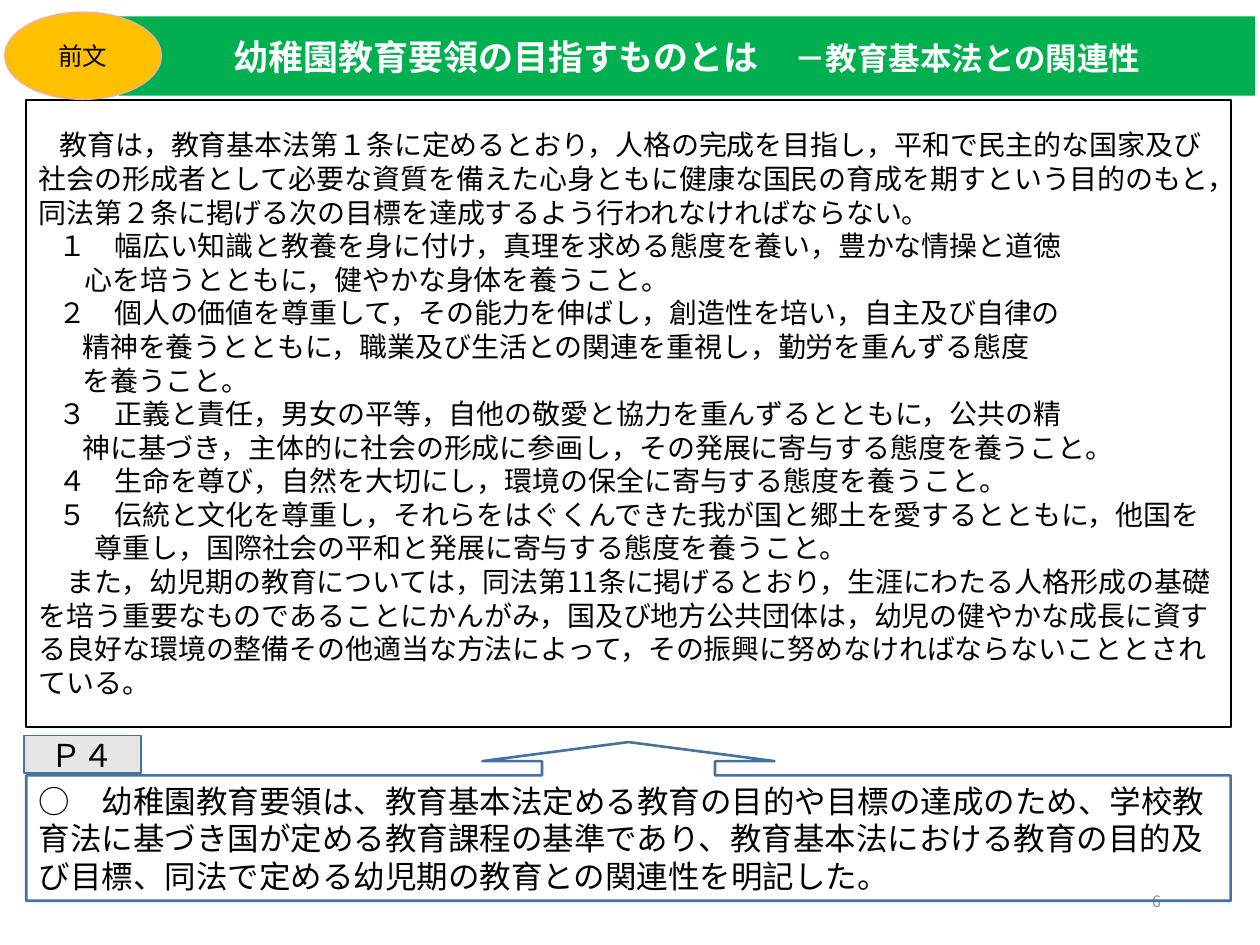
from dataclasses import dataclass

from pptx import Presentation
from pptx.dml.color import RGBColor
from pptx.enum.shapes import MSO_SHAPE as Shape
from pptx.enum.text import MSO_ANCHOR as Anchor, PP_ALIGN as Align
from pptx.oxml.ns import qn
from pptx.util import Cm, Pt


@dataclass(frozen=True)
class Theme:
    font: str = "Noto Sans CJK JP"
    black: str = "000000"
    white: str = "FFFFFF"
    green: str = "00B050"
    amber: str = "FFC000"
    peach: str = "F4B183"
    blue: str = "43739E"
    light_gray: str = "E7E6E6"
    gray: str = "8C8C8C"
    title: int = 20
    large: int = 18
    body: int = 16
    badge: int = 14
    small: int = 9


theme = Theme()
presentation = Presentation()
presentation.slide_width, presentation.slide_height = Cm(25.4), Cm(19.05)
slide = presentation.slides.add_slide(presentation.slide_layouts[6])


def add_box(kind, box, fill=None, line=None, width=1, anchor=Anchor.MIDDLE):
    shape = slide.shapes.add_shape(kind, *(Cm(length) for length in box))
    shape.shadow.inherit = False
    if fill:
        shape.fill.solid()
        shape.fill.fore_color.rgb = RGBColor.from_string(fill)
    else:
        shape.fill.background()
    if line:
        shape.line.color.rgb = RGBColor.from_string(line)
        shape.line.width = Pt(width)
    else:
        shape.line.fill.background()
    shape.text_frame.word_wrap = True
    shape.text_frame.vertical_anchor = anchor
    return shape


def write(paragraph, text, size, color=theme.black, align=Align.LEFT, bold=False):
    paragraph.text = text
    paragraph.alignment = align
    font = paragraph.font
    font.size, font.bold, font.name = Pt(size), bold, theme.font
    font.color.rgb = RGBColor.from_string(color)
    properties = paragraph._p.pPr.find(qn("a:defRPr"))
    east_asian = properties.makeelement(qn("a:ea"), {"typeface": theme.font})
    properties.find(qn("a:latin")).addnext(east_asian)


# Preamble text: (first-line offset, offset of the other lines, text); \v breaks a line
PREAMBLE = [
    (0.42, 0, "教育は，教育基本法第１条に定めるとおり，人格の完成を目指し，平和で民主的な国家及び社会の形成者として必要な資質を備えた心身ともに健康な国民の育成を期すという目的のもと，同法第２条に掲げる次の目標を達成するよう行われなければならない。"),
    (0.4, 0.93, "１　幅広い知識と教養を身に付け，真理を求める態度を養い，豊かな情操と道徳\v心を培うとともに，健やかな身体を養うこと。"),
    (0.4, 0.88, "２　個人の価値を尊重して，その能力を伸ばし，創造性を培い，自主及び自律の\v精神を養うとともに，職業及び生活との関連を重視し，勤労を重んずる態度\vを養うこと。"),
    (0.4, 0.88, "３　正義と責任，男女の平等，自他の敬愛と協力を重んずるとともに，公共の精\v神に基づき，主体的に社会の形成に参画し，その発展に寄与する態度を養うこと。"),
    (0.4, 0.88, "４　生命を尊び，自然を大切にし，環境の保全に寄与する態度を養うこと。"),
    (0.4, 1.13, "５　伝統と文化を尊重し，それらをはぐくんできた我が国と郷土を愛するとともに，他国を\v尊重し，国際社会の平和と発展に寄与する態度を養うこと。"),
    (0.56, 0, "また，幼児期の教育については，同法第11条に掲げるとおり，生涯にわたる人格形成の基礎を培う重要なものであることにかんがみ，国及び地方公共団体は，幼児の健やかな成長に資する良好な環境の整備その他適当な方法によって，その振興に努めなければならないこととされている。"),
]
preamble = add_box(Shape.RECTANGLE, (0.53, 2.01, 24.28, 12.65), line=theme.black)
for index, (first, rest, text) in enumerate(PREAMBLE):
    frame = preamble.text_frame
    paragraph = frame.add_paragraph() if index else frame.paragraphs[0]
    write(paragraph, text, theme.body)
    paragraph._p.pPr.set("marL", str(Cm(rest)))
    paragraph._p.pPr.set("indent", str(Cm(first) - Cm(rest)))

# Page number
number = slide.shapes.add_textbox(Cm(17.93), Cm(17.65), Cm(5.72), Cm(1.02))
number.text_frame.word_wrap = True
number.text_frame.vertical_anchor = Anchor.MIDDLE
write(number.text_frame.paragraphs[0], "6", theme.small, theme.gray, Align.RIGHT)

# Title band with a smaller subtitle
title = add_box(Shape.RECTANGLE, (2.39, 0.33, 22.91, 1.6), theme.green)
heading = title.text_frame.paragraphs[0]
write(heading, "幼稚園教育要領の目指すものとは　", theme.title, theme.white, Align.CENTER, True)
subtitle = heading.add_run()
subtitle.text = "－教育基本法との関連性"
subtitle.font.size = Pt(theme.large)

# Section badge
badge = add_box(Shape.OVAL, (0.1, 0.25, 3.15, 1.75), theme.amber, theme.peach)
write(badge.text_frame.paragraphs[0], "前文", theme.badge, align=Align.CENTER)

# Summary callout pointing up to the preamble
summary = add_box(Shape.UP_ARROW_CALLOUT, (0.53, 14.96, 24.28, 3.2),
                  line=theme.blue, width=1.5, anchor=Anchor.TOP)
for index, value in enumerate((1.09, 0.92, 0.12, 0.79)):
    summary.adjustments[index] = value
write(summary.text_frame.paragraphs[0],
      "○　幼稚園教育要領は、教育基本法定める教育の目的や目標の達成のため、学校教育法に基づき国が定める教育課程の基準であり、教育基本法における教育の目的及び目標、同法で定める幼児期の教育との関連性を明記した。",
      theme.large)

# Page reference tag
tag = add_box(Shape.RECTANGLE, (0.48, 14.83, 2.36, 0.76), theme.light_gray, theme.blue)
write(tag.text_frame.paragraphs[0], "Ｐ４", theme.large, align=Align.CENTER)

presentation.save("out.pptx")
